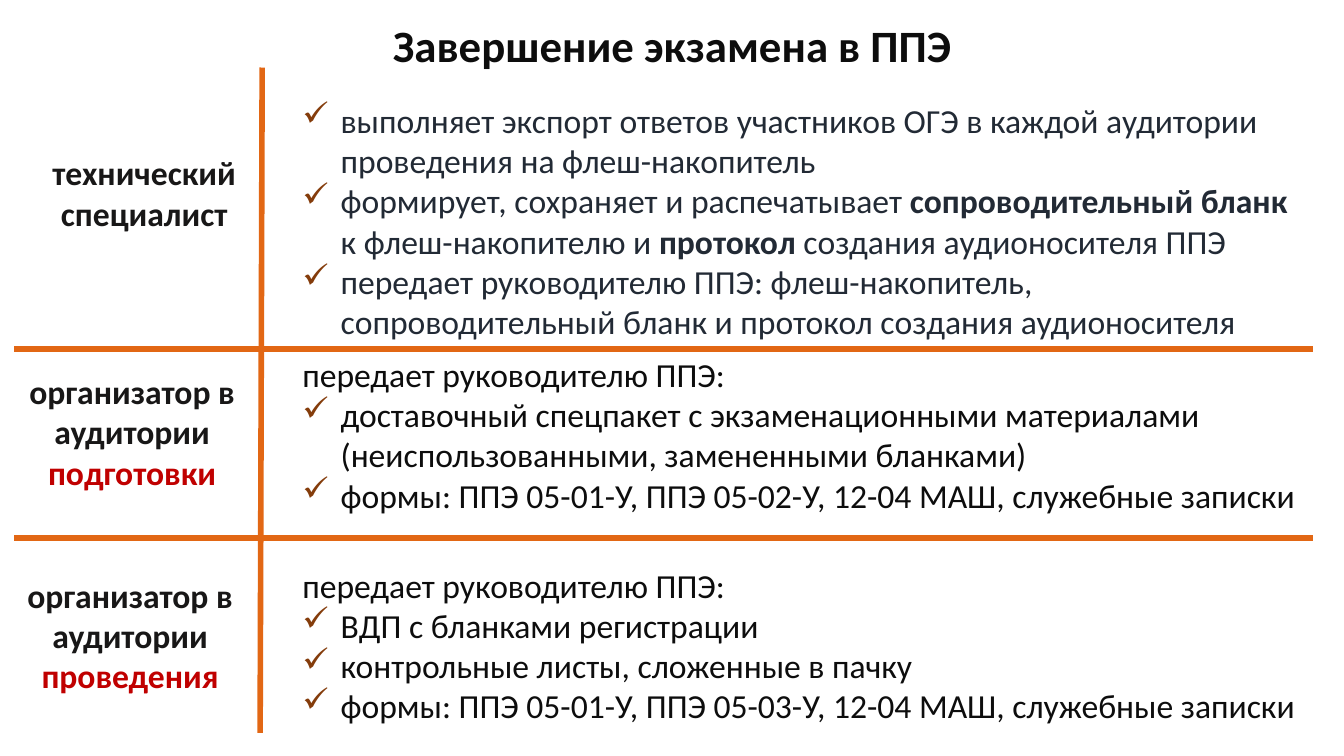
from lxml import etree
from pptx import Presentation
from pptx.dml.color import RGBColor
from pptx.enum.shapes import MSO_CONNECTOR
from pptx.enum.text import PP_ALIGN
from pptx.oxml.ns import qn
from pptx.util import Inches, Pt

STRAIGHT = MSO_CONNECTOR.STRAIGHT
CENTER, LEFT = PP_ALIGN.CENTER, PP_ALIGN.LEFT
ORANGE = RGBColor(0xE2, 0x67, 0x14)
BROWN = RGBColor(0x84, 0x3C, 0x0B)
RED = RGBColor(0xC0, 0x00, 0x00)
LABEL_INK = RGBColor(0x18, 0x17, 0x17)
SLATE = RGBColor(0x22, 0x2A, 0x35)
BLACK = RGBColor(0x0D, 0x0D, 0x0D)

LEAD = "передает руководителю ППЭ:"


def indent(para, left, bulleted):
    props = para._p.get_or_add_pPr()
    props.set("marL", str(Inches(left)))
    props.set("indent", str(Inches(-0.38 if bulleted else 0)))
    if bulleted:
        color = etree.SubElement(props, qn("a:buClr"))
        etree.SubElement(color, qn("a:srgbClr"), val=str(BROWN))
        etree.SubElement(props, qn("a:buChar"), char="✓")


def add_text(page, place, paragraphs, size=24, align=LEFT):
    box = page.shapes.add_textbox(*[Inches(length) for length in place])
    frame = box.text_frame
    frame.word_wrap = True
    for index, spans in enumerate(paragraphs):
        para = frame.paragraphs[0] if index == 0 else frame.add_paragraph()
        para.alignment = align
        if align == LEFT:
            bulleted = spans[0][0] != LEAD
            indent(para, 0.47 if bulleted else 0.09, bulleted)
        for text, color, bold in spans:
            span = para.add_run()
            span.text = text
            span.font.color.rgb = color
            formats = {"name": "Calibri", "size": Pt(size), "bold": bold}
            for name, value in formats.items():
                setattr(span.font, name, value)


deck = Presentation()
deck.slide_width, deck.slide_height = Inches(13.33), Inches(7.5)
page = deck.slides.add_slide(deck.slide_layouts[6])

dividers = [
    (2.6, 0.67, 2.58, 7.27),
    (0.14, 3.46, 13.02, 3.46),
    (0.14, 5.34, 13.02, 5.34),
]
for ends in dividers:
    divider = page.shapes.add_connector(STRAIGHT, *[Inches(length) for length in ends])
    divider.line.color.rgb = ORANGE
    divider.line.width = Pt(4)
    etree.SubElement(divider._element.spPr, qn("a:effectLst"))

add_text(page, (0.71, 0.13, 11.92, 0.64),
         [[("Завершение экзамена в ППЭ", BLACK, True)]], 32, CENTER)

labels = [
    ((0.14, 1.46, 2.58, 0.91), "технический специалист", ""),
    ((0.02, 3.63, 2.58, 1.31), "организатор в аудитории ", "подготовки"),
    ((0, 5.65, 2.58, 1.31), "организатор в аудитории ", "проведения"),
]
for place, role, stage in labels:
    spans = [(role, LABEL_INK, True)]
    if stage:
        spans.append((stage, RED, True))
    add_text(page, place, [spans], align=CENTER)

duties = [
    (0.94, 2.52, SLATE, [
        ["выполняет экспорт ответов участников ОГЭ в каждой аудитории "
         "проведения на флеш-накопитель"],
        ["формирует, сохраняет и распечатывает ", "сопроводительный бланк ",
         "к флеш-накопителю и ", "протокол", " создания аудионосителя ППЭ"],
        ["передает руководителю ППЭ: флеш-накопитель, "
         "сопроводительный бланк и протокол создания аудионосителя"],
    ]),
    (3.46, 1.72, BLACK, [
        [LEAD],
        ["доставочный спецпакет с экзаменационными материалами "
         "(неиспользованными, замененными бланками)"],
        ["формы: ППЭ 05-01-У, ППЭ 05-02-У, 12-04 МАШ, служебные записки"],
    ]),
    (5.55, 1.72, BLACK, [
        [LEAD],
        ["ВДП с бланками регистрации"],
        ["контрольные листы, сложенные в пачку"],
        ["формы: ППЭ 05-01-У, ППЭ 05-03-У, 12-04 МАШ, служебные записки"],
    ]),
]
for top, height, color, items in duties:
    paragraphs = [[(text, color, index % 2 == 1) for index, text in enumerate(item)]
                  for item in items]
    add_text(page, (2.81, top, 10.21, height), paragraphs)

deck.save("out.pptx")
